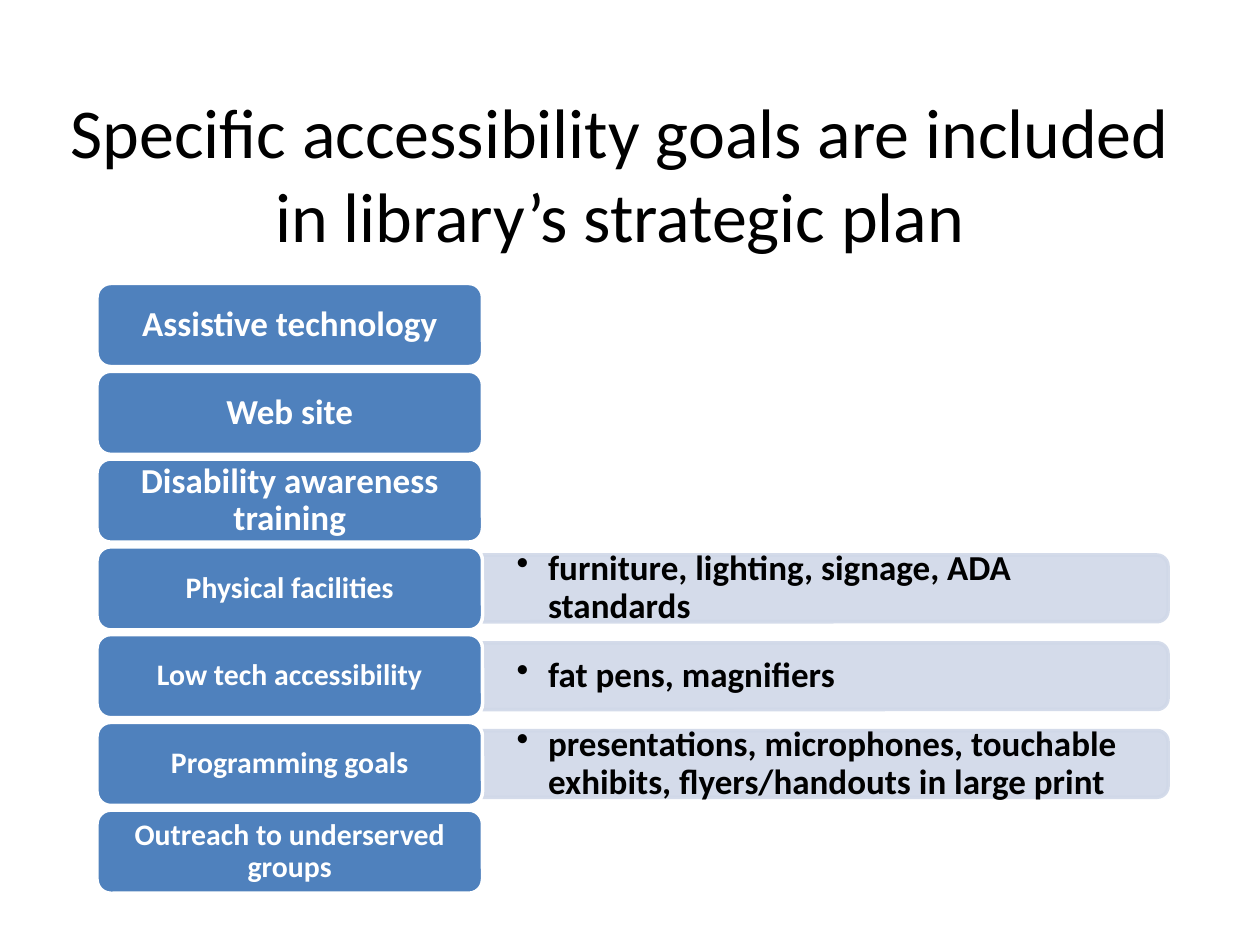
from dataclasses import dataclass

from lxml import etree
from pptx import Presentation
from pptx.dml.color import RGBColor
from pptx.enum.shapes import MSO_SHAPE
from pptx.enum.text import MSO_ANCHOR, PP_ALIGN
from pptx.oxml.ns import qn
from pptx.util import Inches, Pt

ROUNDED = MSO_SHAPE.ROUNDED_RECTANGLE
ROUNDED_TOP = MSO_SHAPE.ROUND_2_SAME_RECTANGLE
MIDDLE = MSO_ANCHOR.MIDDLE
CENTER = PP_ALIGN.CENTER
LEFT = PP_ALIGN.LEFT


@dataclass(frozen=True)
class Theme:
    font: str = "Calibri"
    blue: str = "4F81BD"
    pale: str = "D0D8E8"
    white: str = "FFFFFF"
    black: str = "000000"
    title_size: int = 40
    large: int = 20
    small: int = 17
    outline: int = 2
    pale_alpha: int = 90


THEME = Theme()
TITLE = "Specific accessibility goals are included in library’s strategic plan"
GOALS = [
    ("Assistive technology", THEME.large, None),
    ("Web site", THEME.large, None),
    ("Disability awareness training", THEME.large, None),
    ("Physical facilities", THEME.small, "furniture, lighting, signage, ADA standards"),
    ("Low tech accessibility", THEME.small, "fat pens, magnifiers"),
    ("Programming goals", THEME.small,
     "presentations, microphones, touchable exhibits, flyers/handouts in large print"),
    ("Outreach to underserved groups", THEME.small, None),
]

SLIDE_WIDTH, SLIDE_HEIGHT = 10, 7.5
TITLE_BOX = (0.42, 0.58, 9, 1.58)
GRID_LEFT, GRID_TOP, GRID_BOTTOM = 0.77, 2.25, 7.09
GOAL_WIDTH, GOAL_HEIGHT = 3.06, 0.66
DETAIL_LEFT = GRID_LEFT + GOAL_WIDTH
DETAIL_WIDTH, DETAIL_HEIGHT = 5.44, 0.53
DETAIL_TEXT_WIDTH, DETAIL_TEXT_HEIGHT = 5.41, 0.48
BULLET_INDENT = 0.25
ROW_PITCH = (GRID_BOTTOM - GRID_TOP - GOAL_HEIGHT) / (len(GOALS) - 1)


def inches(*lengths):
    return [Inches(length) for length in lengths]


def write(shape, text, size, color, alignment, insets=(0.1, 0.05), bold=True, spacing=0.9):
    frame = shape.text_frame
    frame.word_wrap = True
    frame.vertical_anchor = MIDDLE
    frame.margin_left = frame.margin_right = Inches(insets[0])
    frame.margin_top = frame.margin_bottom = Inches(insets[1])
    paragraph = frame.paragraphs[0]
    paragraph.text = text
    paragraph.alignment = alignment
    paragraph.line_spacing = spacing
    paragraph.font.name = THEME.font
    paragraph.font.size = Pt(size)
    paragraph.font.bold = bold
    paragraph.font.color.rgb = RGBColor.from_string(color)
    return paragraph


def add_block(slide, kind, box, fill, line):
    shape = slide.shapes.add_shape(kind, *inches(*box))
    shape.shadow.inherit = False
    shape.fill.solid()
    shape.fill.fore_color.rgb = RGBColor.from_string(fill)
    shape.line.color.rgb = RGBColor.from_string(line)
    shape.line.width = Pt(THEME.outline)
    return shape


def add_goal(slide, top, text, size):
    box = (GRID_LEFT, top, GOAL_WIDTH, GOAL_HEIGHT)
    shape = add_block(slide, ROUNDED, box, THEME.blue, THEME.white)
    write(shape, text, size, THEME.white, CENTER, (0.08, 0.04))


def add_detail(slide, middle, text):
    center = DETAIL_LEFT + DETAIL_WIDTH / 2
    box = (center - DETAIL_HEIGHT / 2, middle - DETAIL_WIDTH / 2, DETAIL_HEIGHT, DETAIL_WIDTH)
    panel = add_block(slide, ROUNDED_TOP, box, THEME.pale, THEME.pale)
    panel.rotation = 90
    for color in panel._element.spPr.iter(qn("a:srgbClr")):
        etree.SubElement(color, qn("a:alpha"), val=str(THEME.pale_alpha * 1000))

    text_box = slide.shapes.add_textbox(*inches(
        DETAIL_LEFT, middle - DETAIL_TEXT_HEIGHT / 2, DETAIL_TEXT_WIDTH, DETAIL_TEXT_HEIGHT))
    paragraph = write(text_box, text, THEME.large, THEME.black, LEFT, (0.27, 0.14))
    properties = paragraph._p.get_or_add_pPr()
    properties.set("marL", str(Inches(BULLET_INDENT)))
    properties.set("indent", str(-Inches(BULLET_INDENT)))
    bullet = etree.Element(qn("a:buChar"), char="•")
    properties.find(qn("a:defRPr")).addprevious(bullet)


def main():
    presentation = Presentation()
    presentation.slide_width, presentation.slide_height = inches(SLIDE_WIDTH, SLIDE_HEIGHT)
    slide = presentation.slides.add_slide(presentation.slide_layouts[6])
    title = slide.shapes.add_textbox(*inches(*TITLE_BOX))
    write(title, TITLE, THEME.title_size, THEME.black, CENTER, bold=False, spacing=1.0)
    for row, (goal, size, detail) in enumerate(GOALS):
        top = GRID_TOP + row * ROW_PITCH
        if detail:
            add_detail(slide, top + GOAL_HEIGHT / 2, detail)
        add_goal(slide, top, goal, size)
    presentation.save("out.pptx")


if __name__ == "__main__":
    main()
